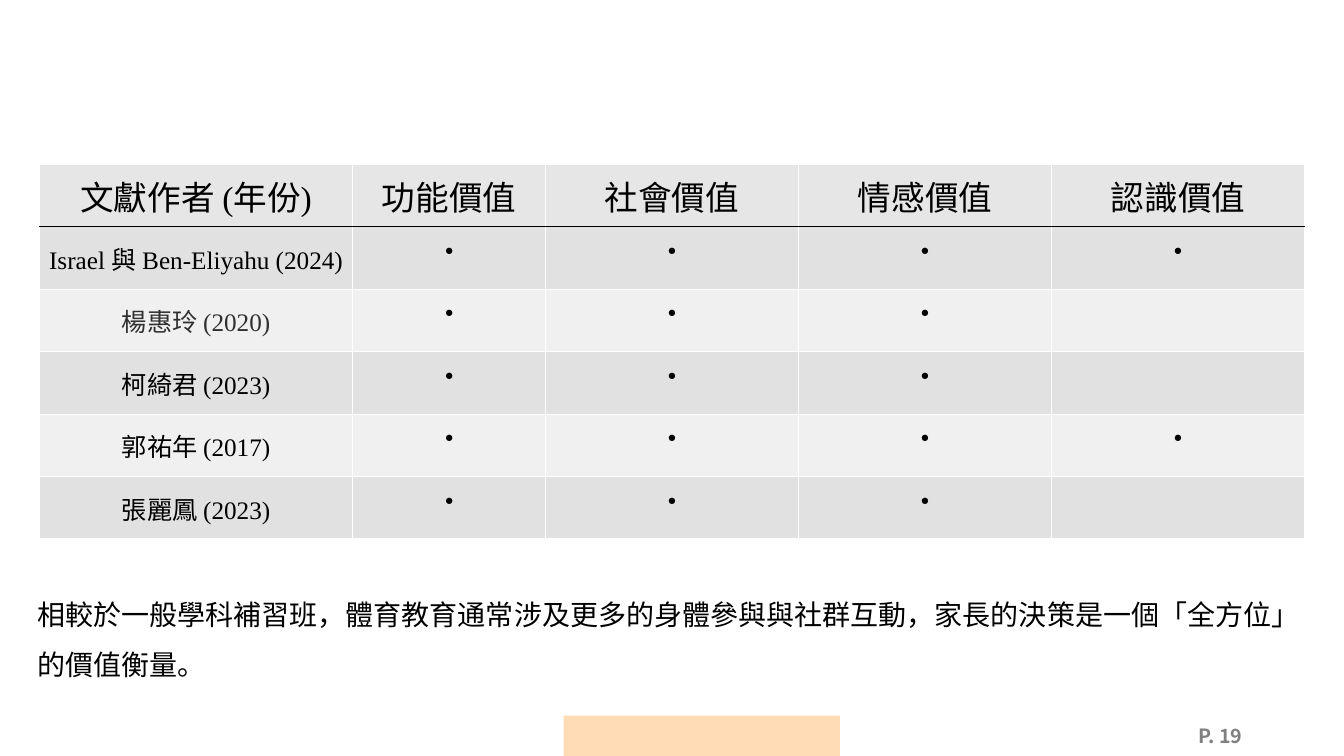
import pptx
import pptx.dml.color
import pptx.enum.shapes
import pptx.enum.text
import pptx.oxml
import pptx.oxml.ns
import pptx.util
from dataclasses import dataclass

Inches = pptx.util.Inches
ALIGN = pptx.enum.text.PP_ALIGN
MIDDLE = pptx.enum.text.MSO_ANCHOR.MIDDLE

HEADERS = ["文獻作者 (年份)", "功能價值", "社會價值", "情感價值", "認識價值"]
# author and year, then one flag for each value
STUDIES = [
    ("Israel 與 Ben-Eliyahu (2024)", (1, 1, 1, 1)),
    ("楊惠玲 (2020)", (1, 1, 1, 0)),
    ("柯綺君 (2023)", (1, 1, 1, 0)),
    ("郭祐年 (2017)", (1, 1, 1, 1)),
    ("張麗鳳 (2023)", (1, 1, 1, 0)),
]
MUTED_STUDY = 1
CONCLUSION = ("相較於一般學科補習班，體育教育通常涉及更多的身體參與與社群互動，"
              "家長的決策是一個「全方位」的價值衡量。")
PAGE_NUMBER = "P. 19"
COLUMN_WIDTHS = [3.11, 1.91, 2.51, 2.51, 2.51]
ROW_HEIGHT = 0.62


@dataclass(frozen=True)
class Theme:
    latin: str = "Times New Roman"
    asian: str = "Noto Sans CJK TC"
    ink: str = "000000"
    muted: str = "303030"
    page: str = "808080"
    accent: str = "FFDCB5"
    grid: str = "FFFFFF"
    header: str = "E7E6E6"
    bands: tuple = ("E1E1E1", "F0F0F0")
    header_size: float = 24
    study_size: float = 18
    dot_size: float = 10.5
    conclusion_size: float = 20
    page_size: float = 14


THEME = Theme()


def rgb(code):
    return pptx.dml.color.RGBColor.from_string(code)


def write(frame, text, size, color=THEME.ink, font=THEME.latin, asian=THEME.asian,
          align=ALIGN.LEFT, bold=False):
    para = frame.paragraphs[0]
    para.alignment = align
    span = para.add_run()
    span.text = text
    span.font.size = pptx.util.Pt(size)
    span.font.name = font
    span.font.bold = bold
    span.font.color.rgb = rgb(color)
    latin = span.font._element.find(pptx.oxml.ns.qn("a:latin"))
    latin.addnext(pptx.oxml.parse_xml(
        f'<a:ea {pptx.oxml.ns.nsdecls("a")} typeface="{asian}"/>'))
    return para


def add_text_box(page, left, top, width, height):
    frame = page.shapes.add_textbox(*map(Inches, (left, top, width, height))).text_frame
    frame.word_wrap = True
    return frame


def style_cell(cell, fill, top, bottom):
    """Set margins, borders and fill; borders must precede the fill in the XML."""
    cell.vertical_anchor = MIDDLE
    cell.margin_left = cell.margin_right = cell.margin_top = Inches(0.01)
    cell.margin_bottom = 0
    properties = cell._tc.get_or_add_tcPr()
    for side, color in (("L", THEME.grid), ("R", THEME.grid), ("T", top), ("B", bottom)):
        properties.append(pptx.oxml.parse_xml(
            f'<a:ln{side} {pptx.oxml.ns.nsdecls("a")} w="12700"><a:solidFill>'
            f'<a:srgbClr val="{color}"/></a:solidFill></a:ln{side}>'))
    cell.fill.solid()
    cell.fill.fore_color.rgb = rgb(fill)


def add_study_table(page):
    row_count = len(STUDIES) + 1
    table = page.shapes.add_table(
        row_count, len(HEADERS), Inches(0.39), Inches(1.63),
        Inches(sum(COLUMN_WIDTHS)), Inches(ROW_HEIGHT * row_count)).table
    for column, width in zip(table.columns, COLUMN_WIDTHS):
        column.width = Inches(width)
    for row in table.rows:
        row.height = Inches(ROW_HEIGHT)

    for column, header in enumerate(HEADERS):
        cell = table.cell(0, column)
        style_cell(cell, THEME.header, THEME.grid, THEME.ink)
        write(cell.text_frame, header, THEME.header_size, align=ALIGN.CENTER)

    for index, (author, flags) in enumerate(STUDIES):
        top = THEME.grid if index else THEME.ink
        for column in range(len(HEADERS)):
            cell = table.cell(index + 1, column)
            style_cell(cell, THEME.bands[index % 2], top, THEME.grid)
            if column == 0:
                color = THEME.muted if index == MUTED_STUDY else THEME.ink
                write(cell.text_frame, author, THEME.study_size, color, align=ALIGN.CENTER)
            elif flags[column - 1]:
                cell.margin_bottom = Inches(0.16)
                write(cell.text_frame, "●", THEME.dot_size, asian=THEME.latin,
                      align=ALIGN.CENTER)


def main():
    deck = pptx.Presentation()
    deck.slide_width, deck.slide_height = Inches(13.33), Inches(7.5)
    page = deck.slides.add_slide(deck.slide_layouts.get_by_name("Blank"))

    number = add_text_box(page, 9.42, 7.1, 3, 0.4)
    number.vertical_anchor = MIDDLE
    write(number, PAGE_NUMBER, THEME.page_size, THEME.page, THEME.asian,
          align=ALIGN.RIGHT, bold=True)

    footer = page.shapes.add_shape(
        pptx.enum.shapes.MSO_SHAPE.RECTANGLE, *map(Inches, (5.59, 7.1, 2.74, 0.4)))
    footer.shadow.inherit = False
    footer.fill.solid()
    footer.fill.fore_color.rgb = rgb(THEME.accent)
    footer.line.fill.background()

    add_study_table(page)

    conclusion = add_text_box(page, 0.27, 5.71, 12.95, 1.05)
    conclusion.auto_size = pptx.enum.text.MSO_AUTO_SIZE.SHAPE_TO_FIT_TEXT
    write(conclusion, CONCLUSION, THEME.conclusion_size).line_spacing = 1.5

    deck.save("out.pptx")


if __name__ == "__main__":
    main()
